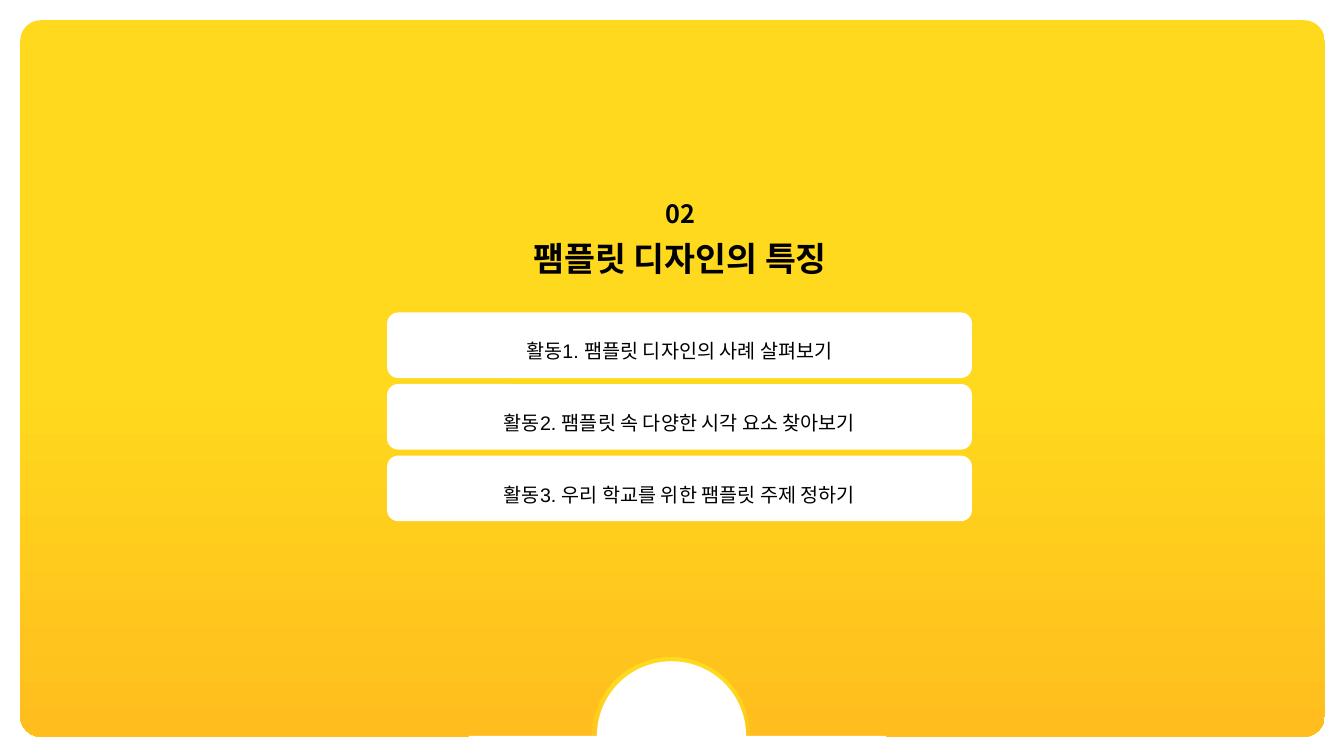
from lxml.etree import SubElement
from pptx import Presentation
from pptx.dml.color import RGBColor
from pptx.enum.shapes import MSO_SHAPE
from pptx.enum.text import MSO_ANCHOR, MSO_AUTO_SIZE, PP_ALIGN
from pptx.oxml.ns import qn
from pptx.util import Emu, Pt

PX = 9144  # EMU in one px, at 100 px to the inch
WHITE = RGBColor(0xFF, 0xFF, 0xFF)
BLACK = RGBColor(0, 0, 0)
YELLOW = RGBColor(0xFF, 0xD9, 0x1D)
ORANGE = RGBColor(0xFF, 0xBE, 0x1E)
KOREAN_FONT = "Noto Sans CJK KR"
SECTION_HEADER = 2

ACTIVITIES = [
    "활동1. 팸플릿 디자인의 사례 살펴보기",
    "활동2. 팸플릿 속 다양한 시각 요소 찾아보기",
    "활동3. 우리 학교를 위한 팸플릿 주제 정하기",
]


def px(length):
    return Emu(length * PX)


def write(frame, text, *, size, font=KOREAN_FONT, bold=False, spacing=1.0,
          anchor=MSO_ANCHOR.TOP, margins=(0, 0)):
    """Fill a text frame with one centred paragraph; margins are (side, top) in px."""
    frame.word_wrap = True
    frame.auto_size = MSO_AUTO_SIZE.NONE
    frame.vertical_anchor = anchor
    frame.margin_left = frame.margin_right = px(margins[0])
    frame.margin_top = frame.margin_bottom = px(margins[1])
    para = frame.paragraphs[0]
    para.alignment = PP_ALIGN.CENTER
    para.line_spacing = spacing
    para.space_before = Pt(0)
    span = para.add_run()
    span.text = text
    span.font.name = font
    span.font.size = Pt(size)
    span.font.bold = bold
    span.font.color.rgb = BLACK
    SubElement(span.font._element, qn("a:ea"), typeface=KOREAN_FONT)


class SectionPage:
    def __init__(self, deck):
        self.page = deck.slides.add_slide(deck.slide_layouts[SECTION_HEADER])

    def shape(self, kind, box, fill=WHITE, corner=None):
        shape = self.page.shapes.add_shape(kind, *map(px, box))
        shape.shadow.inherit = False
        shape.line.fill.background()
        if corner is not None:
            shape.adjustments[0] = corner
        shape.fill.solid()
        shape.fill.fore_color.rgb = fill
        return shape

    def gradient_shape(self, kind, box, stops, angle, corner=None):
        """Stops are (percent, colour); angle runs counter-clockwise."""
        shape = self.shape(kind, box, corner=corner)
        shape.fill.gradient()
        shape.fill.gradient_angle = angle
        stop_list = shape._element.spPr.find(".//" + qn("a:gsLst"))
        stop_list.clear()
        for percent, colour in stops:
            stop = SubElement(stop_list, qn("a:gs"), pos=str(percent * 1000))
            SubElement(stop, qn("a:srgbClr"), val=str(colour))

    def heading(self, index, box, text, size):
        """Place a placeholder's text in front of everything drawn so far."""
        holder = self.page.placeholders[index]
        holder.left, holder.top, holder.width, holder.height = map(px, box)
        write(holder.text_frame, text, size=size, bold=True, spacing=0.9)
        element = holder._element
        element.getparent().append(element)

    def card(self, box, text):
        shape = self.shape(MSO_SHAPE.ROUNDED_RECTANGLE, box, corner=0.167)
        write(shape.text_frame, text, size=14, font="Arial", spacing=1.5,
              anchor=MSO_ANCHOR.MIDDLE, margins=(10, 5))


def main():
    deck = Presentation()
    deck.slide_width, deck.slide_height = px(1333), px(750)
    section = SectionPage(deck)

    section.gradient_shape(
        MSO_SHAPE.ROUNDED_RECTANGLE, (20, 20, 1294, 711),
        [(0, YELLOW), (50, YELLOW), (100, ORANGE)], angle=270, corner=0.029)
    section.gradient_shape(
        MSO_SHAPE.OVAL, (587, 652, 157, 157),
        [(0, ORANGE), (39, ORANGE), (85, YELLOW), (100, YELLOW)], angle=90)
    section.shape(MSO_SHAPE.OVAL, (592, 656, 148, 148))
    section.shape(MSO_SHAPE.RECTANGLE, (465, 730, 414, 20))

    section.heading(0, (281, 241, 787, 36), "팸플릿 디자인의 특징", size=24)
    section.heading(1, (399, 200, 551, 28), "02", size=18)
    for row, activity in enumerate(ACTIVITIES):
        section.card((384, 310 + 71 * row, 580, 65), activity)

    deck.save("out.pptx")


if __name__ == "__main__":
    main()
